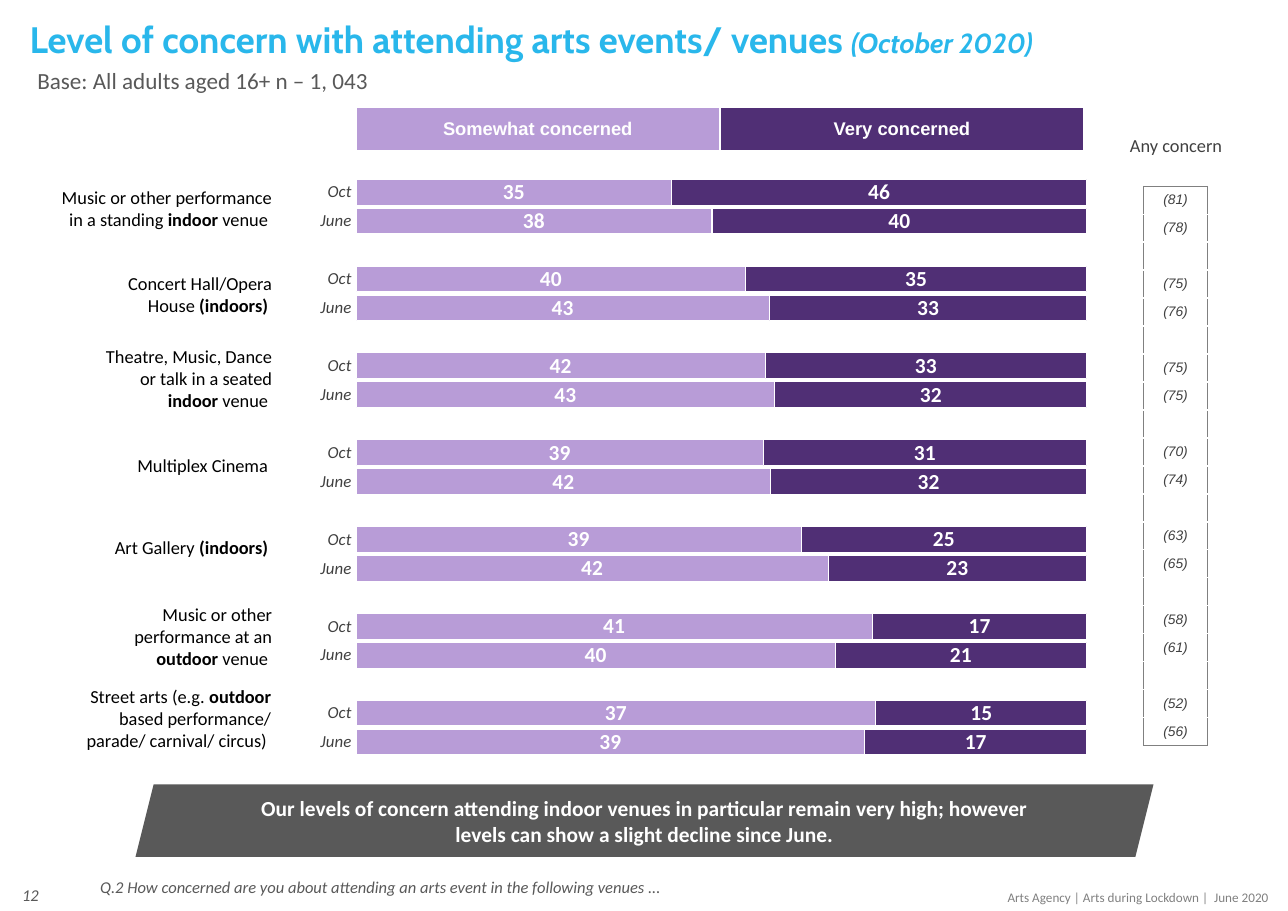
from lxml import etree
from pptx import Presentation
from pptx import util as u
from pptx.chart.data import CategoryChartData
from pptx.dml.color import RGBColor
from pptx.enum import chart as charts, shapes, text
from pptx.oxml import parse_xml
from pptx.oxml.ns import nsdecls, qn

COLORS = {"blue": "29B7EB", "lilac": "B89CD7", "purple": "502F75", "white": "FFFFFF",
          "black": "000000", "ink": "404040", "slate": "595959", "gray": "808080"}
LEFT, CENTER, RIGHT = text.PP_ALIGN.LEFT, text.PP_ALIGN.CENTER, text.PP_ALIGN.RIGHT
TOP, MIDDLE = text.MSO_ANCHOR.TOP, text.MSO_ANCHOR.MIDDLE

# Venue, label box (left, top, width, height), October and June pairs (somewhat, very)
VENUES = [
    ("Music or other performance in a standing *indoor* venue ",
     (0.41, 1.64, 2.16, 0.5), (35, 46), (38, 40)),
    ("Concert Hall/Opera House *(indoors) *", (0.94, 2.42, 1.63, 0.5), (40, 35), (43, 33)),
    ("Theatre, Music, Dance or talk in a seated *indoor* venue ",
     (0.78, 3.08, 1.79, 0.71), (42, 33), (43, 32)),
    ("Multiplex Cinema ", (0.7, 4.07, 1.87, 0.3), (39, 31), (42, 32)),
    ("Art Gallery *(indoors) *", (0.86, 4.82, 1.71, 0.3), (39, 25), (42, 23)),
    ("Music or other performance at an *outdoor* venue ",
     (0.78, 5.43, 1.79, 0.71), (41, 17), (40, 21)),
    ("Street arts (e.g. *outdoor* based performance/ parade/ carnival/ circus) ",
     (0.62, 6.17, 1.94, 0.71), (37, 15), (39, 17)),
]
ANY_CONCERN = [(81, 78), (75, 76), (75, 75), (70, 74), (63, 65), (58, 61), (52, 56)]


def color(name):
    return RGBColor.from_string(COLORS[name])


def inches(box):
    return [u.Inches(value) for value in box]


def with_gaps(groups):
    """Join the pairs into one list with an empty slot between them."""
    slots = [slot for pair in groups for slot in (*pair, None)]
    return slots[:-1]


class SlideBuilder:
    def __init__(self, slide, font="Calibri"):
        self.slide = slide
        self.font = font

    def style(self, font, size, name, bold=False, italic=False, face=None):
        font.size, font.name = u.Pt(size), face or self.font
        font.bold, font.italic = bold, italic
        font.color.rgb = color(name)

    def text(self, box, content, size, name, align=LEFT, anchor=TOP, spacing=1.0, **look):
        """Add a text box; parts between asterisks are bold."""
        frame = self.slide.shapes.add_textbox(*inches(box)).text_frame
        frame.word_wrap, frame.vertical_anchor = True, anchor
        paragraph = frame.paragraphs[0]
        paragraph.alignment, paragraph.line_spacing = align, spacing
        for index, part in enumerate(content.split("*")):
            if part:
                run = paragraph.add_run()
                run.text = part
                self.style(run.font, size, name, **{"bold": index % 2 == 1, **look})
        return paragraph

    def banner(self, box, content, size):
        shape = self.slide.shapes.add_shape(shapes.MSO_SHAPE.PARALLELOGRAM, *inches(box))
        shape.shadow.inherit = False
        shape.fill.solid()
        shape.fill.fore_color.rgb = color("slate")
        shape.line.fill.background()
        frame = shape.text_frame
        frame.margin_left = frame.margin_right = frame.margin_top = frame.margin_bottom = 0
        frame.word_wrap, frame.vertical_anchor = True, MIDDLE
        frame.text = content
        paragraph = frame.paragraphs[0]
        paragraph.alignment = CENTER
        for run in paragraph.runs:
            self.style(run.font, size, "white", bold=True)

    def table(self, box, rows, size, name, fills=None, **look):
        shape = self.slide.shapes.add_table(len(rows), len(rows[0]), *inches(box))
        table = shape.table
        table.first_row = table.horz_banding = False
        for row_index, row in enumerate(rows):
            for column_index, content in enumerate(row):
                cell = table.cell(row_index, column_index)
                cell.margin_left = cell.margin_right = cell.margin_top = cell.margin_bottom = 0
                cell.vertical_anchor = MIDDLE
                if fills:
                    cell.fill.solid()
                    cell.fill.fore_color.rgb = color(fills[column_index])
                else:
                    cell.fill.background()
                paragraph = cell.text_frame.paragraphs[0]
                paragraph.alignment = CENTER
                if content:
                    paragraph.text = content
                    self.style(paragraph.runs[0].font, size, name, face="Arial", **look)
                else:  # keeps an empty row from growing
                    paragraph._p.get_or_add_endParaRPr().set("sz", str(size * 100))
        return table

    def borders(self, cell, **sides):
        """Set cell borders, each side given as (colour, points)."""
        properties = cell._tc.get_or_add_tcPr()
        for index, side in enumerate("LRTB"):
            name, points = sides[side]
            line = parse_xml(f'<a:ln{side} {nsdecls("a")} w="{int(u.Pt(points))}"><a:solidFill>'
                             f'<a:srgbClr val="{COLORS[name]}"/></a:solidFill></a:ln{side}>')
            properties.insert(index, line)

    def stacked_bars(self, box, categories, series, layout):
        data = CategoryChartData(number_format="0")
        data.categories = categories
        for title, values, _ in series:
            data.add_series(title, values)
        chart = self.slide.shapes.add_chart(
            charts.XL_CHART_TYPE.BAR_STACKED_100, *inches(box), data).chart
        chart.has_legend = chart.has_title = False
        self.style(chart.font, 16, "white")

        axis = chart.category_axis
        axis.reverse_order = True
        axis.major_tick_mark = charts.XL_TICK_MARK.NONE
        axis.format.line.fill.background()
        self.style(axis.tick_labels.font, 11, "ink", italic=True)
        chart.value_axis.visible = False
        chart.value_axis.has_major_gridlines = False

        plot = chart.plots[0]
        plot.gap_width, plot.overlap, plot.vary_by_categories = 12, 100, False
        for bars, (_, _, name) in zip(plot.series, series):
            bars.format.fill.solid()
            bars.format.fill.fore_color.rgb = color(name)
            bars.format.line.color.rgb = color("white")
            bars.format.line.width = u.Pt(0.75)
            labels = bars.data_labels
            labels.show_value = True
            labels.number_format, labels.number_format_is_linked = "0", False
            self.style(labels.font, 14, "white", bold=True)

        # Fixed plot area, as fractions of the chart
        area = chart._chartSpace.chart.plotArea
        for old in area.findall(qn("c:layout")):
            area.remove(old)
        holder = etree.Element(qn("c:layout"))
        manual = etree.SubElement(holder, qn("c:manualLayout"))
        settings = [("layoutTarget", "inner"), ("xMode", "edge"), ("yMode", "edge"),
                    *zip("xywh", layout)]
        for tag, value in settings:
            etree.SubElement(manual, qn(f"c:{tag}")).set("val", str(value))
        area.insert(0, holder)


def main():
    presentation = Presentation()
    presentation.slide_width, presentation.slide_height = inches((11.69, 8.27))
    builder = SlideBuilder(presentation.slides.add_slide(presentation.slide_layouts[6]))

    # Title and base
    title = builder.text((0.17, 0.15, 10.93, 0.45),
                         "Level of concern with attending arts events/ venues *(October 2020)",
                         24, "blue", spacing=0.9, bold=True, face="Cabin")
    title.runs[1].font.size, title.runs[1].font.italic = u.Pt(18), True
    builder.text((0.24, 0.58, 6.55, 0.39), "Base: All adults aged 16+ n – 1, 043",
                 15.1, "slate", spacing=0.9)

    # Bars with their legend
    somewhat, very = (with_gaps([(october[i], june[i]) for _, _, october, june in VENUES])
                      for i in range(2))
    categories = [label or "" for label in with_gaps([("Oct", "June")] * len(VENUES))]
    builder.stacked_bars((2.69, 1.51, 7.32, 5.48), categories,
                         [("Somewhat concerned", somewhat, "lilac"),
                          ("Very concerned", very, "purple")],
                         (0.074, 0.019, 0.906, 0.959))
    legend = builder.table((3.23, 0.97, 6.61, 0.41), [["Somewhat concerned", "Very concerned"]],
                           12, "white", fills=["lilac", "purple"], bold=True)
    for cell in legend.iter_cells():
        thin = ("white", 1)
        builder.borders(cell, L=thin, R=thin, T=thin, B=("white", 3))

    # Venue labels
    for venue, box, _, _ in VENUES:
        builder.text(box, venue, 12, "black", align=RIGHT)

    # Any concern column
    builder.text((9.99, 1.17, 1.37, 0.3), "Any concern", 12, "ink", align=CENTER)
    totals = [[f"({total})" if total else ""] for total in with_gaps(ANY_CONCERN)]
    column = builder.table((10.38, 1.69, 0.58, 5.08), totals, 9, "ink", italic=True)
    edge, inner = ("gray", 0.5), ("white", 1)
    for index, cell in enumerate(column.iter_cells()):
        builder.borders(cell, L=edge, R=edge, T=inner if index else edge,
                        B=inner if index < len(totals) - 1 else edge)

    # Conclusion, question and footer
    builder.banner((1.23, 7.12, 9.24, 0.66),
                   "Our levels of concern attending indoor venues in particular remain very high; "
                   "however\vlevels can show a slight decline since June.", 14)
    builder.text((0.81, 7.93, 6.58, 0.34),
                 "Q.2 How concerned are you about attending an arts event in the following venues ...",
                 10.8, "slate", spacing=0.9, italic=True)
    builder.text((0, 7.9, 0.45, 0.44), "12", 10.8, "slate", align=RIGHT, anchor=MIDDLE, italic=True)
    builder.text((7.71, 8.02, 3.91, 0.25), "Arts Agency | Arts during Lockdown |  June 2020",
                 8.6, "gray", align=RIGHT)

    presentation.save("out.pptx")


if __name__ == "__main__":
    main()
